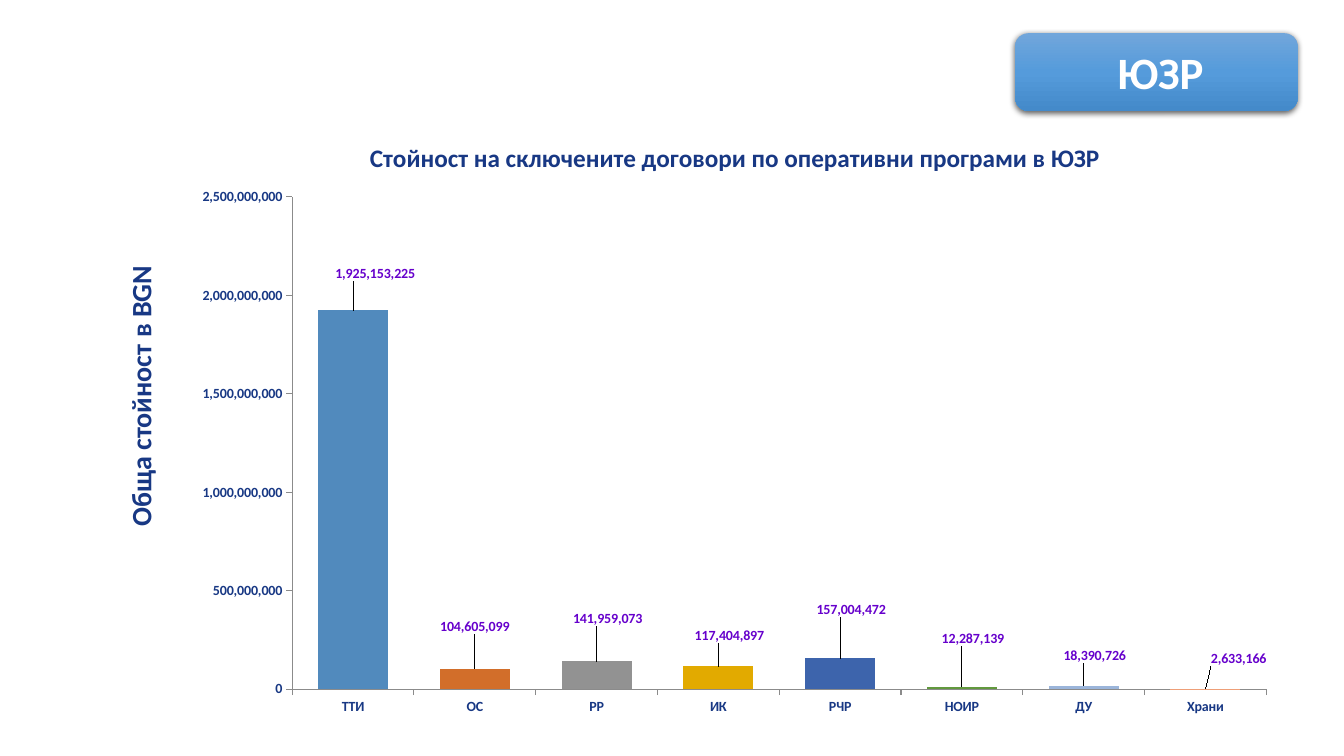
from lxml import etree
from pptx import Presentation
from pptx.chart.data import CategoryChartData
from pptx.dml.color import RGBColor
from pptx.enum.chart import XL_CHART_TYPE, XL_LABEL_POSITION, XL_TICK_MARK
from pptx.enum.shapes import MSO_SHAPE
from pptx.enum.text import MSO_AUTO_SIZE, PP_ALIGN
from pptx.oxml import parse_xml
from pptx.oxml.ns import nsdecls, qn
from pptx.util import Inches, Pt

FONT = "Calibri"
COLORS = {"navy": "183884", "purple": "6600CC", "white": "FFFFFF", "axis": "8B8B8B"}
BADGE_STOPS = [(0, "71A6DB"), (50, "559BDB"), (100, "448ACA")]
CHART_TITLE = "Стойност на сключените договори по оперативни програми в ЮЗР"
PLOT_LAYOUT = {"x": 0.1, "y": 0.13, "w": 0.88, "h": 0.81}
PROGRAMMES = [
    ("ТТИ", 1925153225, "518ABD", 0.02, -0.04),
    ("ОС", 104605099, "D26E2A", 0, -0.05),
    ("РР", 141959073, "929292", 0.01, -0.05),
    ("ИК", 117404897, "E2AA00", 0.01, -0.03),
    ("РЧР", 157004472, "3D64AC", 0.01, -0.06),
    ("НОИР", 12287139, "62993E", 0.01, -0.06),
    ("ДУ", 18390726, "9BB5DA", 0.01, -0.03),
    ("Храни", 2633166, "EE9F78", 0.03, -0.03),
]


def style_font(font, size, color):
    """Set a bold font of the given size and colour."""
    font.name, font.size, font.bold = FONT, Pt(size), True
    font.color.rgb = RGBColor.from_string(COLORS[color])


def add_text(shapes, box, text, size, color, wrap=True, rotation=0):
    """Add a centred one-line text box."""
    shape = shapes.add_textbox(*map(Inches, box))
    shape.rotation = rotation
    frame = shape.text_frame
    frame.word_wrap = wrap
    frame.auto_size = MSO_AUTO_SIZE.SHAPE_TO_FIT_TEXT
    paragraph = frame.paragraphs[0]
    paragraph.text = text
    paragraph.alignment = PP_ALIGN.CENTER
    style_font(paragraph.font, size, color)


def add_badge(slide, box, text_box, text):
    """Add a grouped rounded badge with a gradient, a shadow and its text."""
    group = slide.shapes.add_group_shape()
    shape = group.shapes.add_shape(MSO_SHAPE.ROUNDED_RECTANGLE, *map(Inches, box))
    shape.line.fill.background()
    properties = shape.element.spPr
    stops = "".join(
        f'<a:gs pos="{position * 1000}"><a:srgbClr val="{color}"/></a:gs>'
        for position, color in BADGE_STOPS
    )
    gradient = parse_xml(
        f'<a:gradFill {nsdecls("a")}><a:gsLst>{stops}</a:gsLst>'
        '<a:lin ang="5400000" scaled="0"/></a:gradFill>'
    )
    properties.find(qn("a:prstGeom")).addnext(gradient)
    properties.append(parse_xml(
        f'<a:effectLst {nsdecls("a")}><a:outerShdw blurRad="{Pt(4.5)}" dist="{Pt(1.5)}" '
        'dir="5400000" algn="ctr" rotWithShape="0"><a:srgbClr val="000000">'
        '<a:alpha val="63000"/></a:srgbClr></a:outerShdw></a:effectLst>'
    ))
    add_text(group.shapes, text_box, text, 32, "white")


def make_layout(values, inner=False):
    """Return a manual chart layout made of the given fractions."""
    layout = etree.Element(qn("c:layout"))
    manual = etree.SubElement(layout, qn("c:manualLayout"))
    if inner:
        etree.SubElement(manual, qn("c:layoutTarget"), val="inner")
        for axis in "xy":
            etree.SubElement(manual, qn(f"c:{axis}Mode"), val="edge")
    for name, value in values.items():
        etree.SubElement(manual, qn(f"c:{name}"), val=str(value))
    return layout


def style_axis(axis):
    """Give an axis outward ticks, a thin line and navy labels."""
    axis.has_major_gridlines = False
    axis.major_tick_mark = XL_TICK_MARK.OUTSIDE
    axis.minor_tick_mark = XL_TICK_MARK.NONE
    axis.format.line.color.rgb = RGBColor.from_string(COLORS["axis"])
    axis.format.line.width = Pt(0.75)
    style_font(axis.tick_labels.font, 10, "navy")


def style_points(series):
    """Colour each column and shift its value label."""
    for point_number, (_, _, color, _, _) in enumerate(PROGRAMMES):
        point = series.points[point_number]
        point.format.fill.solid()
        point.format.fill.fore_color.rgb = RGBColor.from_string(color)
        style_font(point.data_label.font, 10, "purple")
        point.data_label.position = XL_LABEL_POSITION.OUTSIDE_END
    labels = series.data_labels
    labels.show_value = True
    labels.number_format = "#,##0"
    labels.number_format_is_linked = False
    style_font(labels.font, 10, "purple")
    label_elements = labels._element.findall(qn("c:dLbl"))
    for element, (_, _, _, shift_x, shift_y) in zip(label_elements, PROGRAMMES):
        element.insert(1, make_layout({"x": shift_x, "y": shift_y}))


def add_contract_chart(slide, box):
    """Add the column chart of contract values by programme."""
    data = CategoryChartData(number_format="#,##0")
    data.categories = [programme[0] for programme in PROGRAMMES]
    data.add_series("Series 1", [programme[1] for programme in PROGRAMMES])
    chart = slide.shapes.add_chart(
        XL_CHART_TYPE.COLUMN_CLUSTERED, *map(Inches, box), data
    ).chart
    chart.font.name, chart.font.size = FONT, Pt(10)
    chart.has_legend = False
    chart.has_title = True
    title = chart.chart_title.text_frame
    title.text = CHART_TITLE
    style_font(title.paragraphs[0].runs[0].font, 18, "navy")
    plot = chart.plots[0]
    plot.gap_width = 74
    plot.vary_by_categories = False
    style_points(plot.series[0])
    style_axis(chart.category_axis)
    value_axis = chart.value_axis
    style_axis(value_axis)
    value_axis.minimum_scale, value_axis.maximum_scale = 0, 2500000000
    value_axis.major_unit = 500000000
    value_axis.tick_labels.number_format = "#,##0"
    value_axis.tick_labels.number_format_is_linked = False
    plot_area = chart.element.find(f".//{qn('c:plotArea')}")
    for layout in plot_area.findall(qn("c:layout")):
        plot_area.remove(layout)
    plot_area.insert(0, make_layout(PLOT_LAYOUT, inner=True))


def main():
    """Build and save the slide."""
    presentation = Presentation()
    presentation.slide_width, presentation.slide_height = Inches(13.33), Inches(7.5)
    slide = presentation.slides.add_slide(presentation.slide_layouts[6])
    add_text(slide.shapes, (-0.01, 3.71, 2.81, 0.44), "Обща стойност в BGN",
             20, "navy", wrap=False, rotation=270)
    add_contract_chart(slide, (1.8, 1.17, 10.98, 6.03))
    add_badge(slide, (10.07, 0.33, 2.8, 0.77), (10.35, 0.39, 2.32, 0.64), "ЮЗР")
    presentation.save("out.pptx")


if __name__ == "__main__":
    main()
